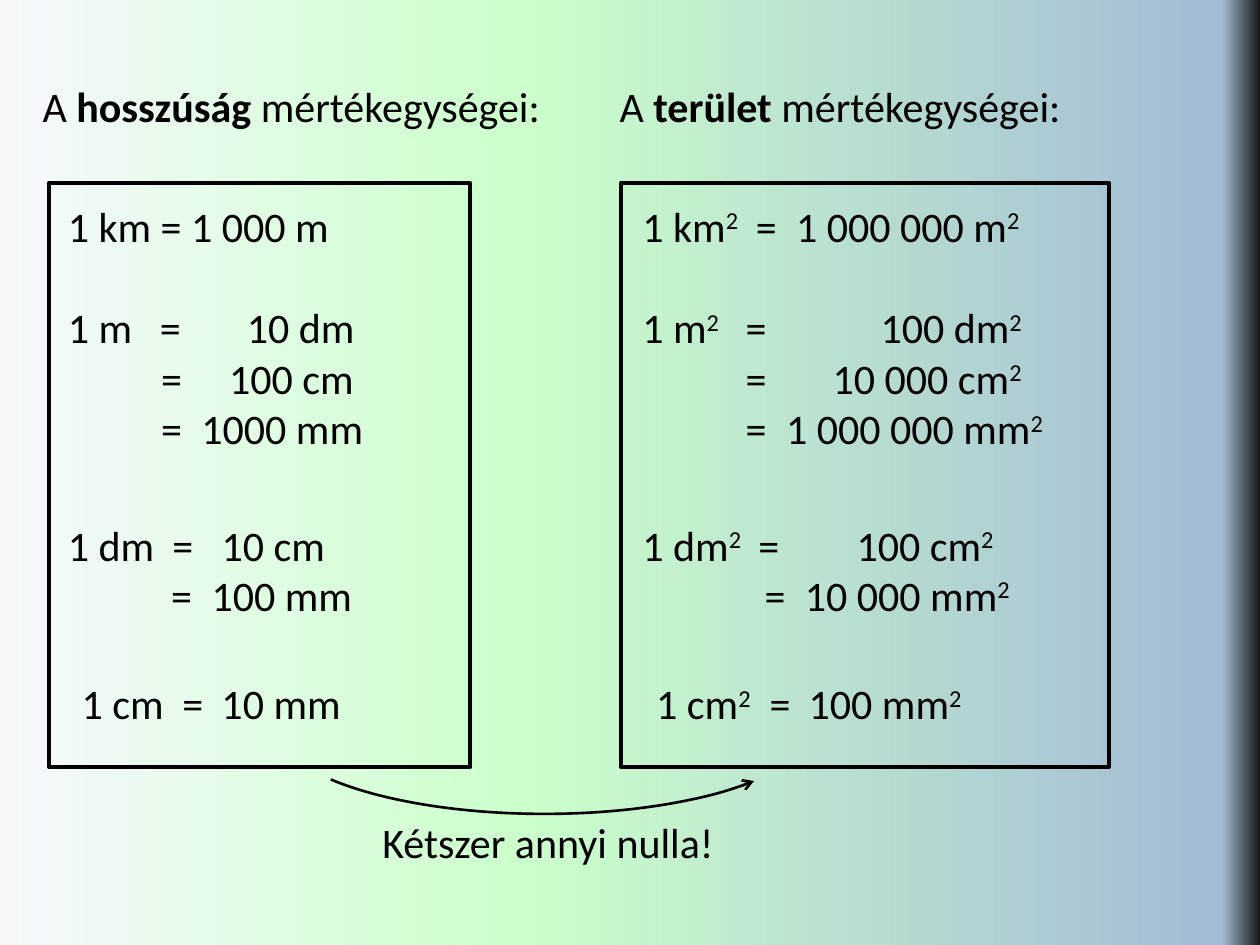
import pptx
import pptx.util
import pptx.dml.color
import pptx.enum.shapes
import pptx.enum.text
import pptx.oxml
import pptx.oxml.ns
from lxml import etree

Inches, Pt = pptx.util.Inches, pptx.util.Pt
qn = pptx.oxml.ns.qn
COLORS = {"ink": "000000", "pale": "F6F8FC", "green": "CCFFCC",
          "blue": "A3BBD5", "edge": "181717"}
BACKGROUND_STOPS = [(0, "pale"), (41, "green"), (97, "blue"), (100, "edge")]
FONT = {"name": "Calibri", "size": Pt(24)}
LINE_HEIGHT = Pt(29.3)

# Each row: text with tabs, tab stops in inches; ^ raises the next digit.
# Each block: indent in the panel, top in the panel, width, height, rows.
LENGTH_BLOCKS = [
    (0.05, 0.09, 3.09, 2.12, [
        ("1 km = 1 000 m", []),
        ("1 m\t=\t10 dm", [0.73, 1.42]),
        ("\t=\t100 cm", [0.74, 1.28]),
        ("\t=\t1000 mm", [0.74, 1.06])]),
    (0.05, 2.62, 3.09, 0.91, [
        ("1 dm\t=\t10 cm", [0.83, 1.22]),
        ("\t=\t100 mm", [0.82, 1.14])]),
    (0.16, 3.88, 2.46, 0.51, [("1 cm\t=\t10 mm", [0.8, 1.11])]),
]
AREA_BLOCKS = [
    (0.07, 0.09, 3.53, 2.12, [
        ("1 km^2\t=\t1 000 000 m^2", [0.9, 1.22]),
        ("1 m^2\t=\t100 dm^2", [0.82, 1.89]),
        ("\t=\t10 000 cm^2", [0.82, 1.51]),
        ("\t=\t1 000 000 mm^2", [0.82, 1.14])]),
    (0.07, 2.62, 3.2, 0.91, [
        ("1 dm^2\t=\t100 cm^2", [0.92, 1.7]),
        ("\t=\t10 000 mm^2", [0.97, 1.29])]),
    (0.18, 3.88, 3.09, 0.51, [("1 cm^2\t=\t100 mm^2", [0.9, 1.21])]),
]


def rgb(name):
    return pptx.dml.color.RGBColor.from_string(COLORS[name])


def add_span(para, text, bold=False, raised=False):
    span = para.add_run()
    span.text = text
    for key, value in {**FONT, "bold": bold}.items():
        setattr(span.font, key, value)
    span.font.color.rgb = rgb("ink")
    if raised:
        span._r.get_or_add_rPr().set("baseline", "30000")


def add_text_box(page, left, top, width, height, wrap=True):
    box = page.shapes.add_textbox(*map(Inches, (left, top, width, height)))
    box.text_frame.word_wrap = wrap
    return box.text_frame


def add_tab_stops(para, stops):
    tabs = etree.SubElement(para._p.get_or_add_pPr(), qn("a:tabLst"))
    for stop in stops:
        etree.SubElement(tabs, qn("a:tab"), pos=str(Inches(stop)), algn="l")


def add_outline(shape, width):
    shape.shadow.inherit = False
    shape.fill.background()
    shape.line.color.rgb = rgb("ink")
    shape.line.width = Pt(width)


def paint_background(page):
    fill = page.background.fill
    fill.gradient()
    fill.gradient_angle = 0
    stops = next(page._element.iter(qn("a:gsLst")))
    for stop in list(stops):
        stops.remove(stop)
    for percent, name in BACKGROUND_STOPS:
        stop = etree.SubElement(stops, qn("a:gs"), pos=str(percent * 1000))
        etree.SubElement(stop, qn("a:srgbClr"), val=COLORS[name])


def add_heading(page, left, top, width, height, topic):
    para = add_text_box(page, left, top, width, height, wrap=False).paragraphs[0]
    add_span(para, "A ")
    add_span(para, topic, bold=True)
    add_span(para, " mértékegységei:")


def add_block(page, left, top, width, height, rows):
    frame = add_text_box(page, left, top, width, height)
    for index, (text, stops) in enumerate(rows):
        para = frame.add_paragraph() if index else frame.paragraphs[0]
        if index == 1 and len(rows) > 2:  # gap after the kilometre row
            para.space_before = LINE_HEIGHT
        if stops:
            add_tab_stops(para, stops)
        first, *others = text.split("^")
        add_span(para, first)
        for part in others:
            add_span(para, part[0], raised=True)
            if part[1:]:
                add_span(para, part[1:])


def add_panel(page, left, top, width, height, blocks):
    for indent, drop, block_width, block_height, rows in blocks:
        add_block(page, left + indent, top + drop, block_width, block_height, rows)
    frame = page.shapes.add_shape(
        pptx.enum.shapes.MSO_SHAPE.RECTANGLE,
        *map(Inches, (left, top, width, height)))
    add_outline(frame, 2.25)


def add_rule_note(page, left, top, width, height):
    frame = add_text_box(page, left, top, width, height, wrap=False)
    frame.paragraphs[0].alignment = pptx.enum.text.PP_ALIGN.CENTER
    add_span(frame.paragraphs[0], "Kétszer annyi nulla!")


def add_curved_arrow(page, left, top, width, height):
    arc = page.shapes.add_shape(
        pptx.enum.shapes.MSO_SHAPE.ARC,
        *map(Inches, (left, top, width, height)))
    arc.adjustments[0], arc.adjustments[1] = 9.26, 99.14
    add_outline(arc, 1.5)
    etree.SubElement(arc.line._get_or_add_ln(), qn("a:headEnd"), type="arrow")


def main():
    deck = pptx.Presentation()
    deck.slide_width, deck.slide_height = Inches(10), Inches(7.5)
    page = deck.slides.add_slide(deck.slide_layouts[6])
    paint_background(page)

    # Lengths on the left, areas on the right
    add_heading(page, 0.24, 0.59, 4.16, 0.51, "hosszúság")
    add_panel(page, 0.39, 1.45, 3.34, 4.64, LENGTH_BLOCKS)
    add_heading(page, 4.82, 0.59, 3.74, 0.51, "terület")
    add_panel(page, 4.93, 1.45, 3.87, 4.64, AREA_BLOCKS)

    # Link between the two panels
    add_rule_note(page, 2.92, 6.43, 2.86, 0.51)
    add_curved_arrow(page, 2.16, 5.02, 4.32, 1.44)
    deck.save("out.pptx")


if __name__ == "__main__":
    main()
